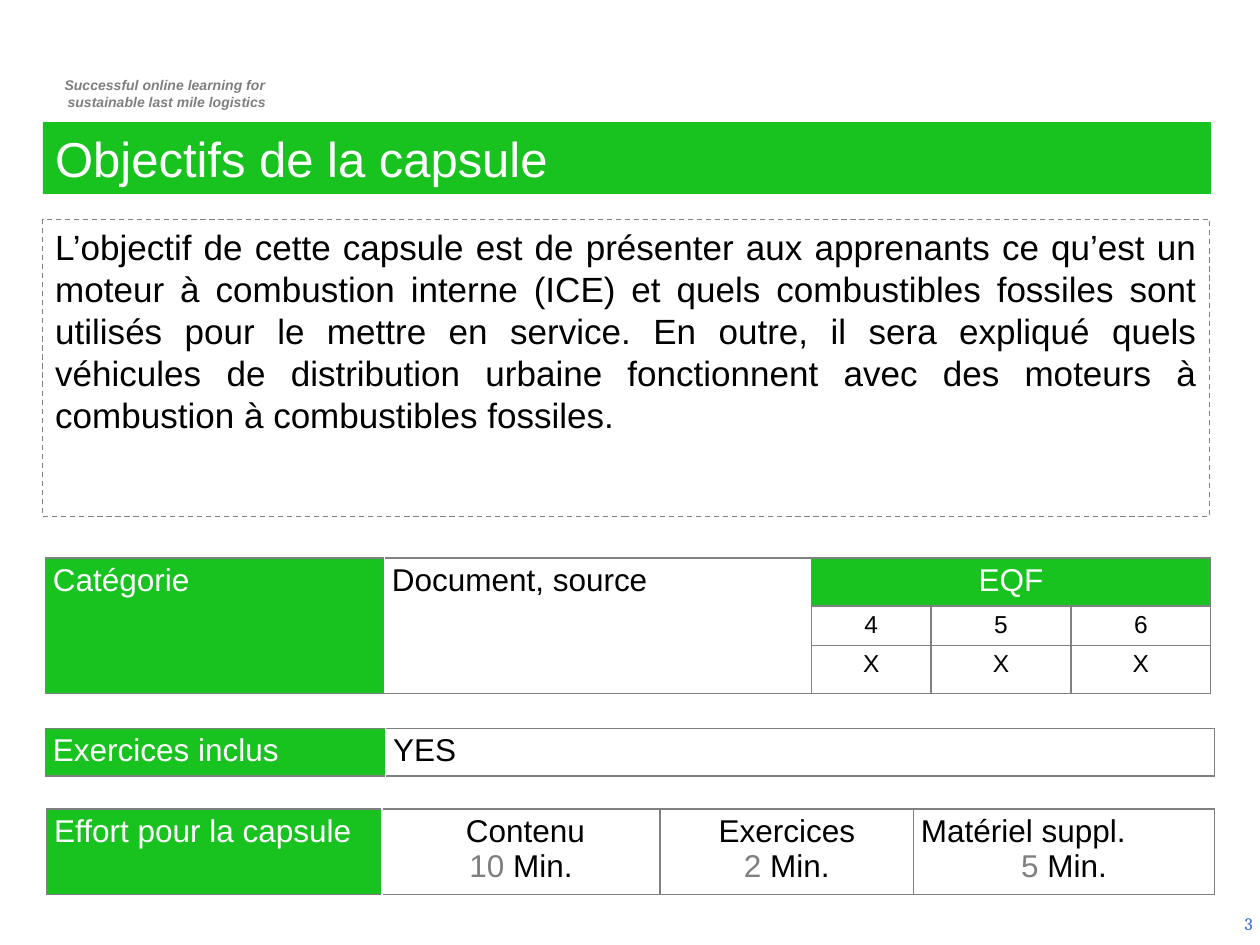
from lxml.etree import SubElement
from pptx import Presentation
from pptx.dml.color import RGBColor
from pptx.enum.dml import MSO_LINE
from pptx.enum.shapes import MSO_SHAPE
from pptx.enum.text import MSO_ANCHOR, PP_ALIGN
from pptx.oxml.ns import qn
from pptx.util import Inches, Pt

COLORS = {"green": "18C320", "white": "FFFFFF", "black": "000000",
          "gray": "7F7F7F", "border": "808080", "blue": "3366CC"}
LEFT, CENTER, RIGHT, JUSTIFY = (PP_ALIGN.LEFT, PP_ALIGN.CENTER,
                                PP_ALIGN.RIGHT, PP_ALIGN.JUSTIFY)

# Content: a paragraph is a string or a list of (text, color) runs
TAGLINE = ["Successful online learning for ", "sustainable last mile logistics"]
TITLE = "Objectifs de la capsule"
OBJECTIVE = (
    "L’objectif de cette capsule est de présenter aux apprenants ce qu’est un "
    "moteur à combustion interne (ICE) et quels combustibles fossiles sont "
    "utilisés pour le mettre en service. En outre, il sera expliqué quels "
    "véhicules de distribution urbaine fonctionnent avec des moteurs à "
    "combustion à combustibles fossiles.")
PAGE_NUMBER = "3"
CATEGORY, SOURCE, EQF = "Catégorie", "Document, source", "EQF"
EQF_LEVELS = [("4", "X"), ("5", "X"), ("6", "X")]
EXERCISES, EXERCISES_INCLUDED = "Exercices inclus", "YES"
EFFORT = "Effort pour la capsule"
EFFORT_MINUTES = [("\u00a0Contenu", "10 ", CENTER), ("Exercices", "2 ", CENTER),
                  ("Matériel suppl.", "5 ", LEFT)]


def rgb(name):
    return RGBColor.from_string(COLORS[name])


def write(frame, paragraphs, size=18, color="black", font="Arial", aligns=(LEFT,),
          bold=False, italic=False):
    """Fill a text frame; the last alignment serves all remaining paragraphs."""
    frame.word_wrap = True
    for i, content in enumerate(paragraphs):
        paragraph = frame.add_paragraph() if i else frame.paragraphs[0]
        paragraph.alignment = aligns[min(i, len(aligns) - 1)]
        runs = [(content, color)] if isinstance(content, str) else content
        for text, run_color in runs:
            run = paragraph.add_run()
            run.text = text
            run.font.size, run.font.name = Pt(size), font
            run.font.bold, run.font.italic = bold, italic
            run.font.color.rgb = rgb(run_color)


def add_box(slide, box, fill=None, dashed=False):
    panel = slide.shapes.add_shape(MSO_SHAPE.RECTANGLE, *map(Inches, box))
    panel.shadow.inherit = False
    if fill:
        panel.fill.solid()
        panel.fill.fore_color.rgb = rgb(fill)
    else:
        panel.fill.background()
    if dashed:
        panel.line.color.rgb = rgb("border")
        panel.line.width = Pt(0.75)
        panel.line.dash_style = MSO_LINE.DASH
    else:
        panel.line.fill.background()
    panel.text_frame.vertical_anchor = MSO_ANCHOR.TOP
    return panel.text_frame


def add_borders(cell, sides):
    properties = cell._tc.get_or_add_tcPr()
    for index, side in enumerate(sides):
        line = SubElement(properties, qn("a:ln" + side), w=str(Pt(1)))
        fill = SubElement(line, qn("a:solidFill"))
        SubElement(fill, qn("a:srgbClr"), val=COLORS["border"])
        properties.remove(line)
        properties.insert(index, line)


def add_grid(slide, left, top, columns, rows):
    """Add a bordered table whose first column is a green label."""
    table = slide.shapes.add_table(
        len(rows), len(columns), Inches(left), Inches(top),
        Inches(sum(columns)), Inches(sum(rows))).table
    table.first_row = table.horz_banding = False
    for column, width in zip(table.columns, columns):
        column.width = Inches(width)
    for row, height in zip(table.rows, rows):
        row.height = Inches(height)
        for i, cell in enumerate(row.cells):
            cell.margin_left = cell.margin_right = Inches(0.06)
            cell.margin_top = cell.margin_bottom = Inches(0.04)
            cell.fill.background()
            # No line between the label and its neighbour
            add_borders(cell, {0: "LTB", 1: "RTB"}.get(i, "LRTB"))
    return table


def fill_cell(cell, paragraphs, fill=None, **text_format):
    if fill:
        cell.fill.solid()
        cell.fill.fore_color.rgb = rgb(fill)
    write(cell.text_frame, paragraphs, **text_format)


LABEL = {"fill": "green", "color": "white"}


def main():
    deck = Presentation()
    deck.slide_width, deck.slide_height = Inches(10), Inches(7.5)
    slide = deck.slides.add_slide(deck.slide_layouts[6])

    # Tagline and page number
    tagline = slide.shapes.add_textbox(*map(Inches, (0.29, 0.56, 2.03, 0.37)))
    write(tagline.text_frame, TAGLINE, size=8, color="gray", aligns=(CENTER,),
          bold=True, italic=True)
    for paragraph in tagline.text_frame.paragraphs:
        paragraph._p.get_or_add_pPr().set("marL", str(Inches(0.04)))
    page = slide.shapes.add_textbox(*map(Inches, (7.71, 7.13, 2.33, 0.4)))
    page.text_frame.vertical_anchor = MSO_ANCHOR.MIDDLE
    write(page.text_frame, [PAGE_NUMBER], size=10, color="blue", font="Cambria",
          aligns=(RIGHT,))

    # Title bar and objective
    write(add_box(slide, (0.34, 0.97, 9.27, 0.57), fill="green"), [TITLE],
          size=28, color="white")
    write(add_box(slide, (0.34, 1.74, 9.26, 2.36), dashed=True), [OBJECTIVE],
          size=20, aligns=(JUSTIFY,))

    # Category and EQF levels
    category = add_grid(slide, 0.36, 4.43, [2.69, 3.39, 0.95, 1.11, 1.11],
                        [0.37, 0.31, 0.37])
    for first, last in [((0, 0), (2, 0)), ((0, 1), (2, 1)), ((0, 2), (0, 4))]:
        category.cell(*first).merge(category.cell(*last))
    fill_cell(category.cell(0, 0), [CATEGORY], **LABEL)
    fill_cell(category.cell(0, 1), [SOURCE])
    fill_cell(category.cell(0, 2), [EQF], aligns=(CENTER,), **LABEL)
    for column, level in enumerate(EQF_LEVELS, start=2):
        for row, mark in enumerate(level, start=1):
            fill_cell(category.cell(row, column), [mark], size=14, aligns=(CENTER,))

    # Exercises
    exercises = add_grid(slide, 0.36, 5.78, [2.7, 6.58], [0.37])
    fill_cell(exercises.cell(0, 0), [EXERCISES], **LABEL)
    fill_cell(exercises.cell(0, 1), [EXERCISES_INCLUDED])

    # Effort
    effort = add_grid(slide, 0.37, 6.42, [2.66, 2.21, 2.01, 2.39], [0.67])
    fill_cell(effort.cell(0, 0), [EFFORT], **LABEL)
    for column, (activity, minutes, align) in enumerate(EFFORT_MINUTES, start=1):
        duration = [(minutes, "gray"), ("Min.", "black")]
        fill_cell(effort.cell(0, column), [activity, duration], aligns=(align, CENTER))

    deck.save("out.pptx")


if __name__ == "__main__":
    main()
